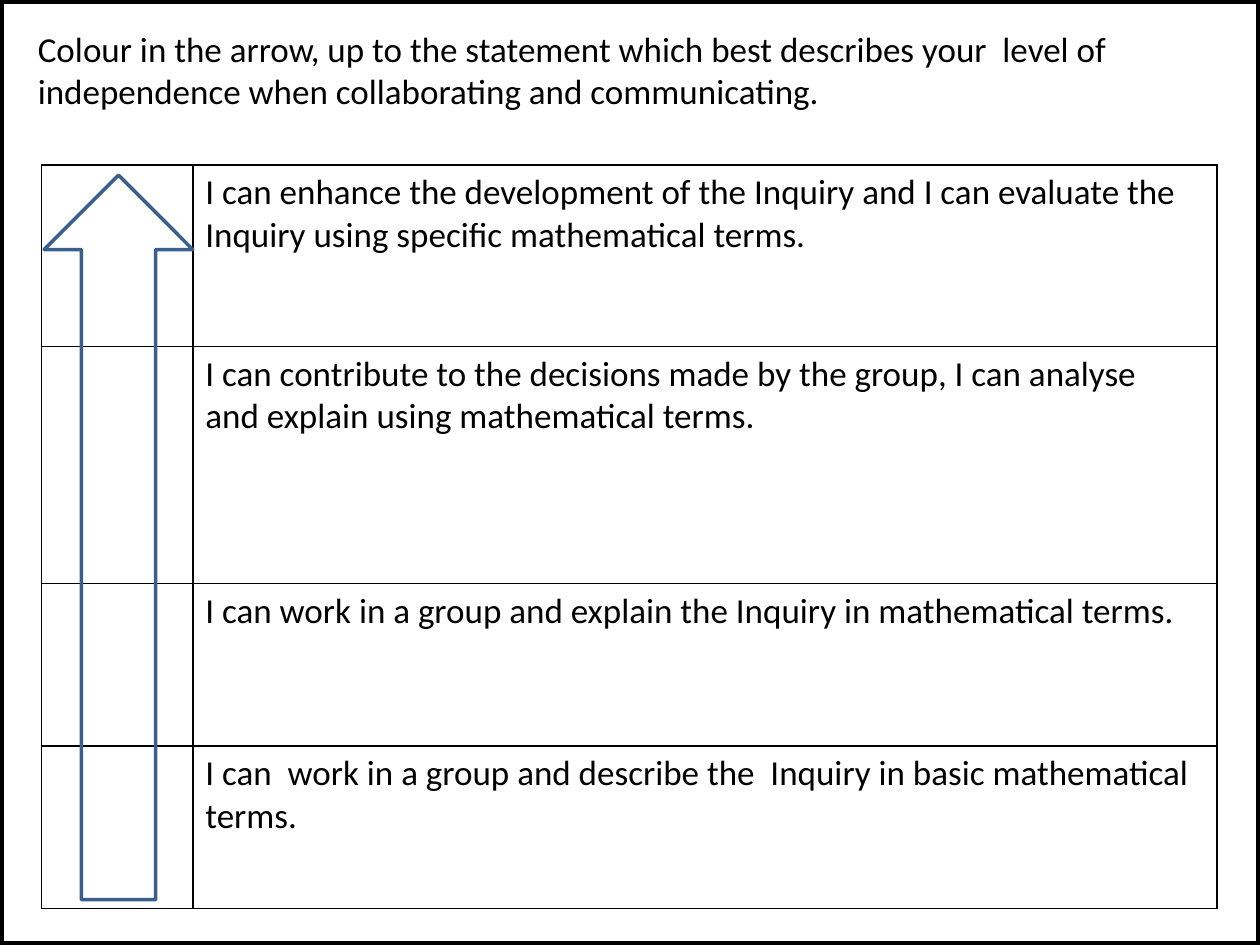
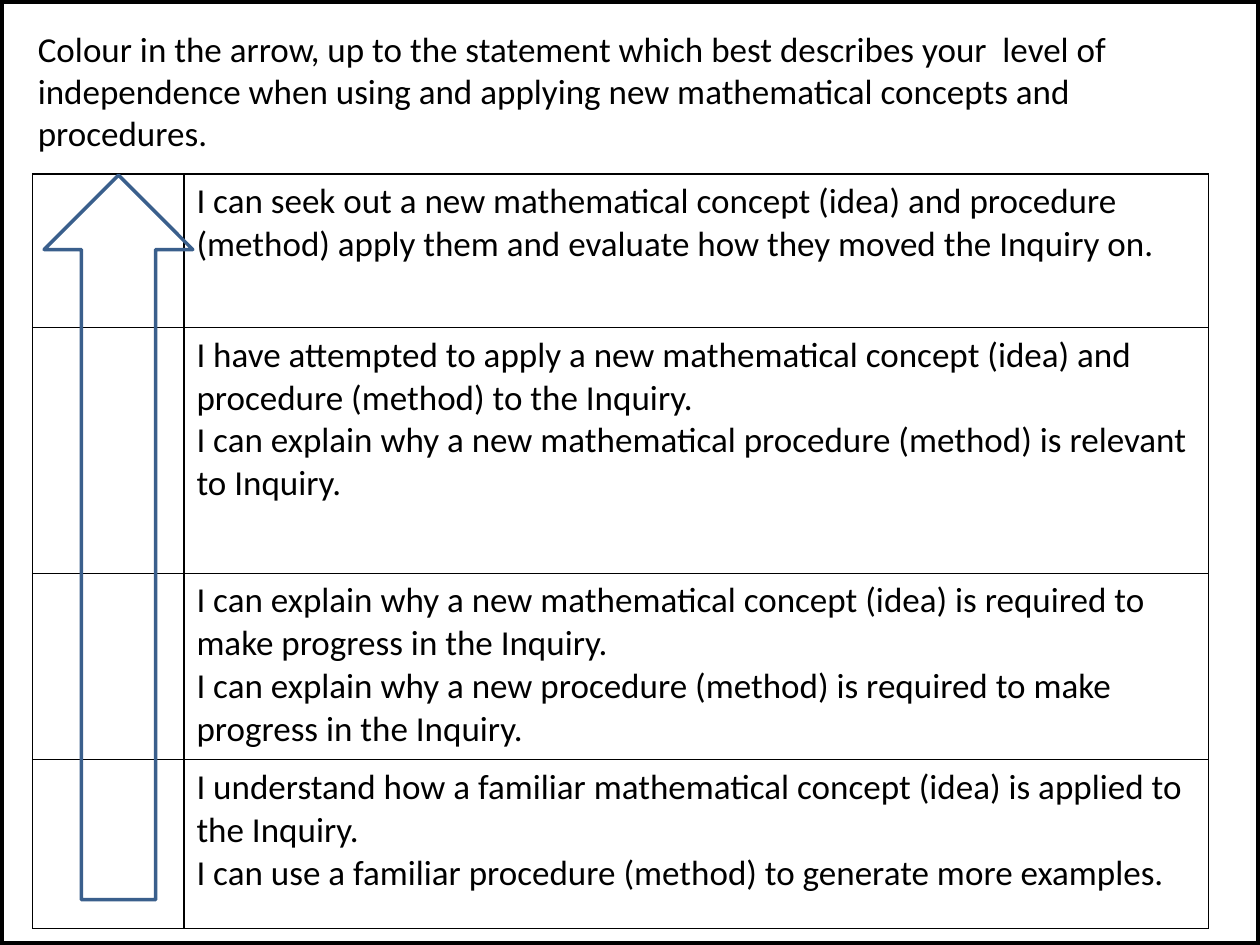
from lxml.etree import SubElement
from pptx import Presentation
from pptx.dml.color import RGBColor
from pptx.enum.shapes import MSO_SHAPE
from pptx.enum.text import MSO_ANCHOR, MSO_AUTO_SIZE, PP_ALIGN
from pptx.oxml.ns import qn
from pptx.util import Inches, Pt

BLACK, WHITE, BLUE = "000000", "FFFFFF", "3A5F8C"
FONT = "Calibri"
COLS = (1.2, 8.13)
PROMPT = ("Colour in the arrow, up to the statement which best describes "
          "your  level of independence when ")

TEAM = [
    (1.44, "I can enhance the development of the Inquiry and I can evaluate "
           "the Inquiry using specific mathematical terms."),
    (1.88, "I can contribute to the decisions made by the group, I can "
           "analyse  and explain using mathematical terms."),
    (1.29, "I can work in a group and explain the Inquiry in mathematical "
           "terms."),
    (1.29, "I can  work in a group and describe the  Inquiry in basic "
           "mathematical terms."),
]
SKILL = [
    (1.22, "I can seek out a new mathematical concept (idea) and procedure "
           "(method) apply them and evaluate how they moved the Inquiry on."),
    (1.95, "I have attempted to apply a new mathematical concept (idea) and "
           "procedure (method) to the Inquiry.\n"
           "I can explain why a new mathematical procedure (method) is "
           "relevant to Inquiry."),
    (1.48, "I can explain why a new mathematical concept (idea) is required "
           "to make progress in the Inquiry.\n"
           "I can explain why a new procedure (method) is required to make "
           "progress in the Inquiry."),
    (1.34, "I understand how a familiar mathematical concept (idea) is "
           "applied to the Inquiry.\n"
           "I can use a familiar procedure (method) to generate more "
           "examples."),
]


def paint(code):
    return RGBColor.from_string(code)


def write(frame, text, size=20, color=BLACK, bold=False, align=PP_ALIGN.LEFT):
    frame.text = text
    for para in frame.paragraphs:
        para.alignment = align
        font = para.font
        for run in para.runs:
            font = run.font
            font.name, font.size, font.bold = FONT, Pt(size), bold
            font.color.rgb = paint(color)


def outline(slide, kind, box, color, width, turn=0):
    shape = slide.shapes.add_shape(kind, *map(Inches, box))
    shape.shadow.inherit = False
    shape.fill.background()
    shape.line.color.rgb = paint(color)
    shape.line.width = Pt(width)
    shape.rotation = turn


def edge(cell, color=BLACK, width=1):
    props = cell._tc.get_or_add_tcPr()
    for index, side in enumerate(("a:lnL", "a:lnR", "a:lnT", "a:lnB")):
        line = props.makeelement(qn(side), {"w": str(Pt(width))})
        fill = SubElement(line, qn("a:solidFill"))
        SubElement(fill, qn("a:srgbClr"), val=color)
        props.insert(index, line)


def ladder(slide, left, top, steps):
    high = sum(step[0] for step in steps)
    frame = slide.shapes.add_table(
        len(steps), len(COLS), *map(Inches, (left, top, sum(COLS), high)))
    table = frame.table
    table.first_row = table.horz_banding = False
    for col, wide in zip(table.columns, COLS):
        col.width = Inches(wide)
    for row, (tall, text) in zip(table.rows, steps):
        row.height = Inches(tall)
        write(row.cells[1].text_frame, text)
        for cell in row.cells:
            cell.fill.background()
            edge(cell)


def title(slide, text, high):
    shape = slide.shapes.title
    shape.left, shape.top = Inches(0.2), Inches(0.17)
    shape.width, shape.height = Inches(9.39), Inches(high)
    shape.fill.solid()
    shape.fill.fore_color.rgb = paint(WHITE)
    frame = shape.text_frame
    frame.word_wrap = True
    frame.auto_size = MSO_AUTO_SIZE.SHAPE_TO_FIT_TEXT
    frame.vertical_anchor = MSO_ANCHOR.TOP
    write(frame, text)


def sheet(deck, topic, high, left, top, steps):
    slide = deck.slides.add_slide(deck.slide_layouts[5])
    title(slide, PROMPT + topic, high)
    outline(slide, MSO_SHAPE.RECTANGLE, (0, 0, 10, 7.5), BLACK, 5)
    ladder(slide, left, top, steps)
    outline(slide, MSO_SHAPE.DOWN_ARROW, (0.35, 1.39, 1.18, 5.75), BLUE, 2,
            turn=180)


def main():
    deck = Presentation()
    deck.slide_width, deck.slide_height = Inches(10), Inches(7.5)
    sheet(deck, "collaborating and communicating.", 0.77, 0.33, 1.31, TEAM)
    sheet(deck, "using and applying new mathematical concepts and procedures.",
          1.11, 0.26, 1.38, SKILL)
    deck.save("out.pptx")


if __name__ == "__main__":
    main()
